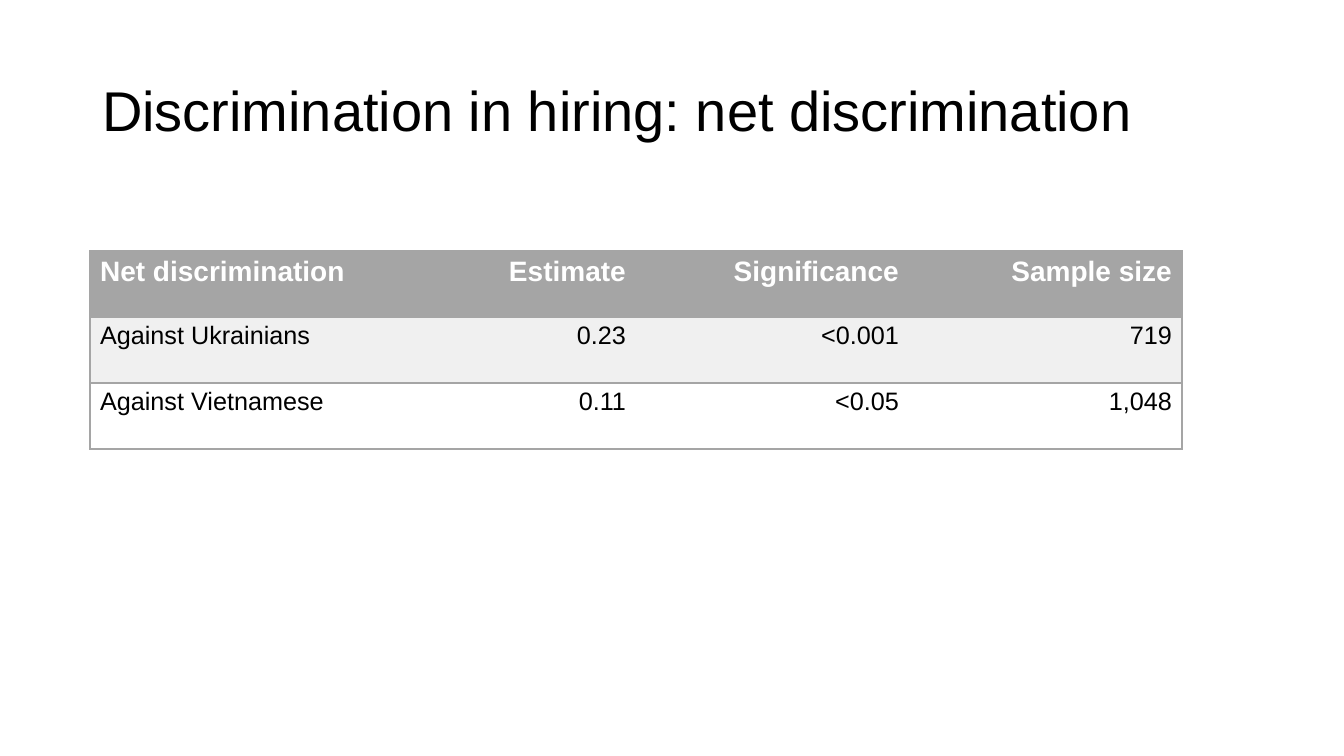
import dataclasses

import lxml.etree
import pptx
import pptx.dml.color
import pptx.enum.text
import pptx.oxml.ns
import pptx.table
import pptx.util

EMU_PER_PX = 914400 / 100.8
FONT = "Arial"
BLACK = "000000"
WHITE = "FFFFFF"
GREY = "A5A5A5"
LIGHT_GREY = "F0F0F0"
COLUMN_WIDTH = 273
ROW_HEIGHT = 66


@dataclasses.dataclass(frozen=True)
class ResultRow:
    values: tuple[str, ...]
    fill: str
    color: str = BLACK
    size: int = 18
    bold: bool = False


RESULTS = (
    ResultRow(("Net discrimination", "Estimate", "Significance", "Sample size"),
              GREY, WHITE, 20, True),
    ResultRow(("Against Ukrainians", "0.23", "<0.001", "719"), LIGHT_GREY),
    ResultRow(("Against Vietnamese", "0.11", "<0.05", "1,048"), WHITE),
)


def px(length: int) -> pptx.util.Emu:
    return pptx.util.Emu(round(length * EMU_PER_PX))


def rgb(color: str) -> pptx.dml.color.RGBColor:
    return pptx.dml.color.RGBColor.from_string(color)


def format_runs(paragraph, size: int, color: str, bold: bool) -> None:
    for run in paragraph.runs:
        run.font.name = FONT
        run.font.size = pptx.util.Pt(size)
        run.font.bold = bold
        run.font.color.rgb = rgb(color)


def set_borders(cell: pptx.table._Cell, visible: dict[str, bool]) -> None:
    properties = cell._tc.get_or_add_tcPr()
    qn = pptx.oxml.ns.qn
    for position, (side, shown) in enumerate(visible.items()):
        border = lxml.etree.Element(qn(f"a:ln{side}"), w=str(pptx.util.Pt(1)))
        if shown:
            fill = lxml.etree.SubElement(border, qn("a:solidFill"))
            lxml.etree.SubElement(fill, qn("a:srgbClr"), val=GREY)
        else:
            lxml.etree.SubElement(border, qn("a:noFill"))
        properties.insert(position, border)


def fill_row(table: pptx.table.Table, index: int, result: ResultRow) -> None:
    table.rows[index].height = px(ROW_HEIGHT)
    last = len(result.values) - 1
    for column, value in enumerate(result.values):
        cell = table.cell(index, column)
        cell.fill.solid()
        cell.fill.fore_color.rgb = rgb(result.fill)
        set_borders(cell, {"L": column == 0, "R": column == last, "T": True, "B": True})
        paragraph = cell.text_frame.paragraphs[0]
        paragraph.text = value
        align = pptx.enum.text.PP_ALIGN
        paragraph.alignment = align.RIGHT if column else align.LEFT
        format_runs(paragraph, result.size, result.color, result.bold)


def add_title(slide, text: str) -> None:
    title = slide.shapes.title
    title.left, title.top, title.width, title.height = map(px, (92, 40, 1159, 146))
    title.text_frame.text = text
    title.text_frame.vertical_anchor = pptx.enum.text.MSO_ANCHOR.MIDDLE
    heading = title.text_frame.paragraphs[0]
    heading.alignment = pptx.enum.text.PP_ALIGN.LEFT
    heading.line_spacing = 0.9
    format_runs(heading, 40, BLACK, False)


def add_results(slide) -> None:
    row_count, column_count = len(RESULTS), len(RESULTS[0].values)
    table = slide.shapes.add_table(
        row_count, column_count, px(90), px(251),
        px(column_count * COLUMN_WIDTH), px(row_count * ROW_HEIGHT)).table
    table.horz_banding = False
    for column in table.columns:
        column.width = px(COLUMN_WIDTH)
    for index, result in enumerate(RESULTS):
        fill_row(table, index, result)


def main() -> None:
    presentation = pptx.Presentation()
    presentation.slide_width = px(1344)
    presentation.slide_height = px(756)
    slide = presentation.slides.add_slide(presentation.slide_layouts[5])
    add_title(slide, "Discrimination in hiring: net discrimination")
    add_results(slide)
    presentation.save("out.pptx")


if __name__ == "__main__":
    main()
